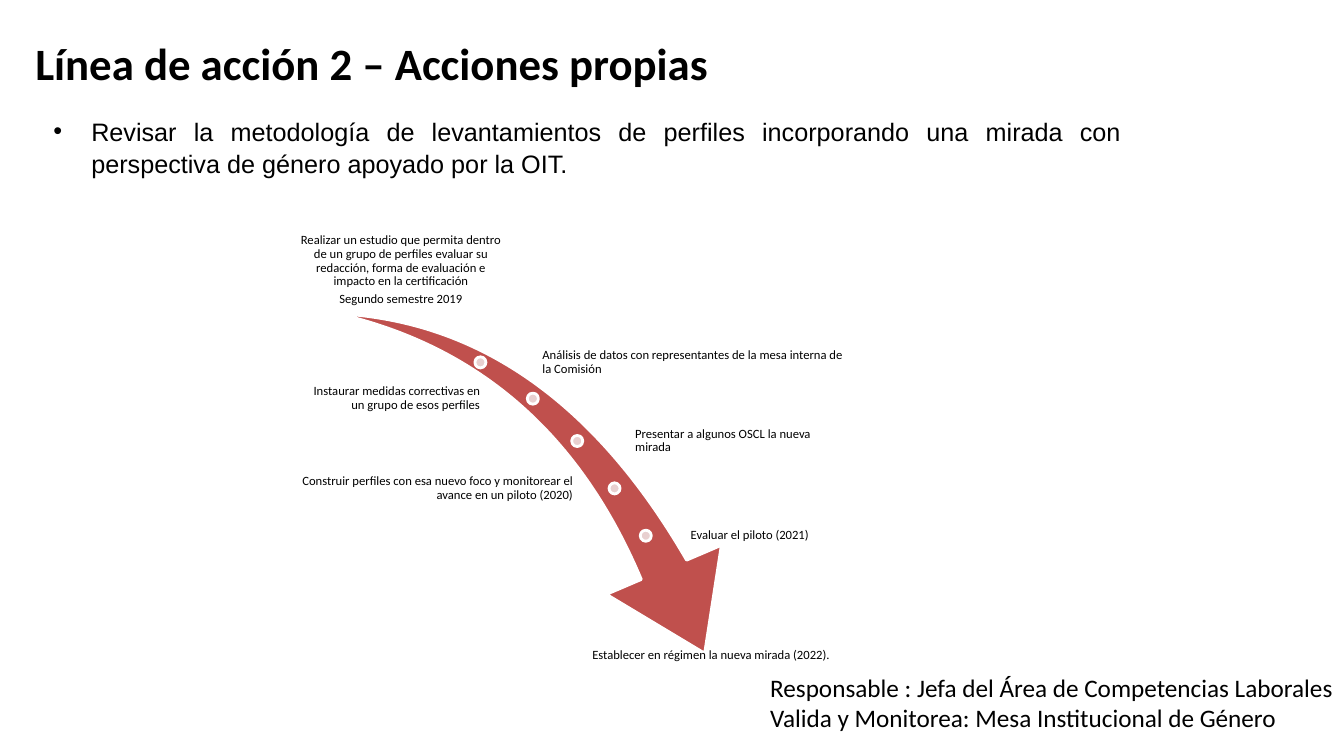
from dataclasses import dataclass

from pptx import Presentation
from pptx.dml.color import RGBColor
from pptx.enum.shapes import MSO_SHAPE as Shape
from pptx.enum.text import MSO_ANCHOR as Anchor, MSO_AUTO_SIZE as AutoSize, PP_ALIGN as Align
from pptx.util import Inches, Pt


@dataclass(frozen=True)
class Theme:
    ink: RGBColor = RGBColor(0x00, 0x00, 0x00)
    arrow: RGBColor = RGBColor(0xC0, 0x50, 0x4D)
    dot: RGBColor = RGBColor(0xE8, 0xD0, 0xD0)
    outline: RGBColor = RGBColor(0xFF, 0xFF, 0xFF)
    heading_font: str = "Calibri"
    body_font: str = "Arial"
    title_size: Pt = Pt(32)
    body_size: Pt = Pt(18)
    step_size: Pt = Pt(9)


theme = Theme()


def write(shape, text, *, size, font=theme.heading_font, bold=False, align=Align.LEFT,
          anchor=Anchor.TOP, spacing=1.0, after=0, margin=None, wrap=True):
    """Fill the shape with one paragraph per line of text, all in the same format."""
    frame = shape.text_frame
    frame.text = text
    frame.word_wrap = wrap
    frame.auto_size = AutoSize.NONE
    frame.vertical_anchor = anchor
    if margin is not None:
        frame.margin_left = frame.margin_right = Inches(margin)
        frame.margin_top = frame.margin_bottom = Inches(margin)
    for paragraph in frame.paragraphs:
        paragraph.alignment = align
        paragraph.line_spacing = spacing
        paragraph.space_before = Pt(0)
        paragraph.space_after = Pt(after)
        paragraph.font.size = size
        paragraph.font.name = font
        paragraph.font.bold = bold
        paragraph.font.color.rgb = theme.ink


def add_mark(kind, box, fill):
    """Draw a filled shape with the white outline shared by the arrow and its dots."""
    mark = slide.shapes.add_shape(kind, *map(Inches, box))
    mark.shadow.inherit = False
    mark.fill.solid()
    mark.fill.fore_color.rgb = fill
    mark.line.color.rgb = theme.outline
    mark.line.width = Pt(2)
    return mark


prs = Presentation()
prs.slide_width, prs.slide_height = Inches(13.33), Inches(7.5)
slide = prs.slides.add_slide(prs.slide_layouts[1])

# Title and action
title, action = slide.placeholders
title.left, title.top, title.width, title.height = map(Inches, (0, 0, 7.38, 1.25))
write(title, "Línea de acción 2 – Acciones propias", size=theme.title_size, bold=True,
      align=Align.CENTER, anchor=Anchor.MIDDLE)

action.left, action.top, action.width, action.height = map(Inches, (0.43, 1.08, 10.79, 0.73))
action_indent = Inches(0.31)
action_format = action.text_frame.paragraphs[0]._p.get_or_add_pPr()
action_format.set("marL", str(action_indent))
action_format.set("indent", str(-action_indent))
write(action, "Revisar la metodología de levantamientos de perfiles incorporando una mirada "
      "con perspectiva de género apoyado por la OIT.", size=theme.body_size,
      font=theme.body_font, align=Align.JUSTIFY, spacing=1.07, after=8)

# Timeline arrow with its milestones
timeline = add_mark(Shape.SWOOSH_ARROW, (3.26, 3.24, 4.27, 2.98), theme.arrow)
timeline.rotation = 73.3
timeline.adjustments[0], timeline.adjustments[1] = 0.163, 0.314

for left, top in [(4.71, 3.54), (5.23, 3.9), (5.67, 4.32), (6.04, 4.79), (6.35, 5.26)]:
    add_mark(Shape.OVAL, (left, top, 0.11, 0.11), theme.dot)

# Steps: left, top, width, alignment, anchor, text
steps = [
    (2.97, 2.26, 2.01, Align.CENTER, Anchor.BOTTOM,
     "Realizar un estudio que permita dentro de un grupo de perfiles evaluar su redacción, "
     "forma de evaluación e impacto en la certificación\nSegundo semestre 2019"),
    (5.37, 3.2, 3.05, Align.LEFT, Anchor.MIDDLE,
     "Análisis de datos con representantes de la mesa interna de la Comisión"),
    (2.97, 3.56, 1.8, Align.RIGHT, Anchor.MIDDLE,
     "Instaurar medidas correctivas en un grupo de esos perfiles"),
    (6.29, 3.98, 2.12, Align.LEFT, Anchor.MIDDLE,
     "Presentar a algunos OSCL la nueva mirada"),
    (2.97, 4.45, 2.72, Align.RIGHT, Anchor.MIDDLE,
     "Construir perfiles con esa nuevo foco y monitorear el avance en un piloto (2020)"),
    (6.84, 4.92, 1.58, Align.LEFT, Anchor.MIDDLE, "Evaluar el piloto (2021)"),
    (5.69, 6.42, 2.72, Align.CENTER, Anchor.TOP,
     "Establecer en régimen la nueva mirada (2022)."),
]
for left, top, width, align, anchor, text in steps:
    step = slide.shapes.add_textbox(*map(Inches, (left, top, width, 0.79)))
    write(step, text, size=theme.step_size, align=align, anchor=anchor,
          spacing=0.9, after=3, margin=0.01)

# People in charge
responsible = slide.shapes.add_textbox(*map(Inches, (7.54, 6.62, 5.79, 0.71)))
write(responsible, "Responsable : Jefa del Área de Competencias Laborales\n"
      "Valida y Monitorea: Mesa Institucional de Género", size=theme.body_size, wrap=False)

prs.save("out.pptx")
